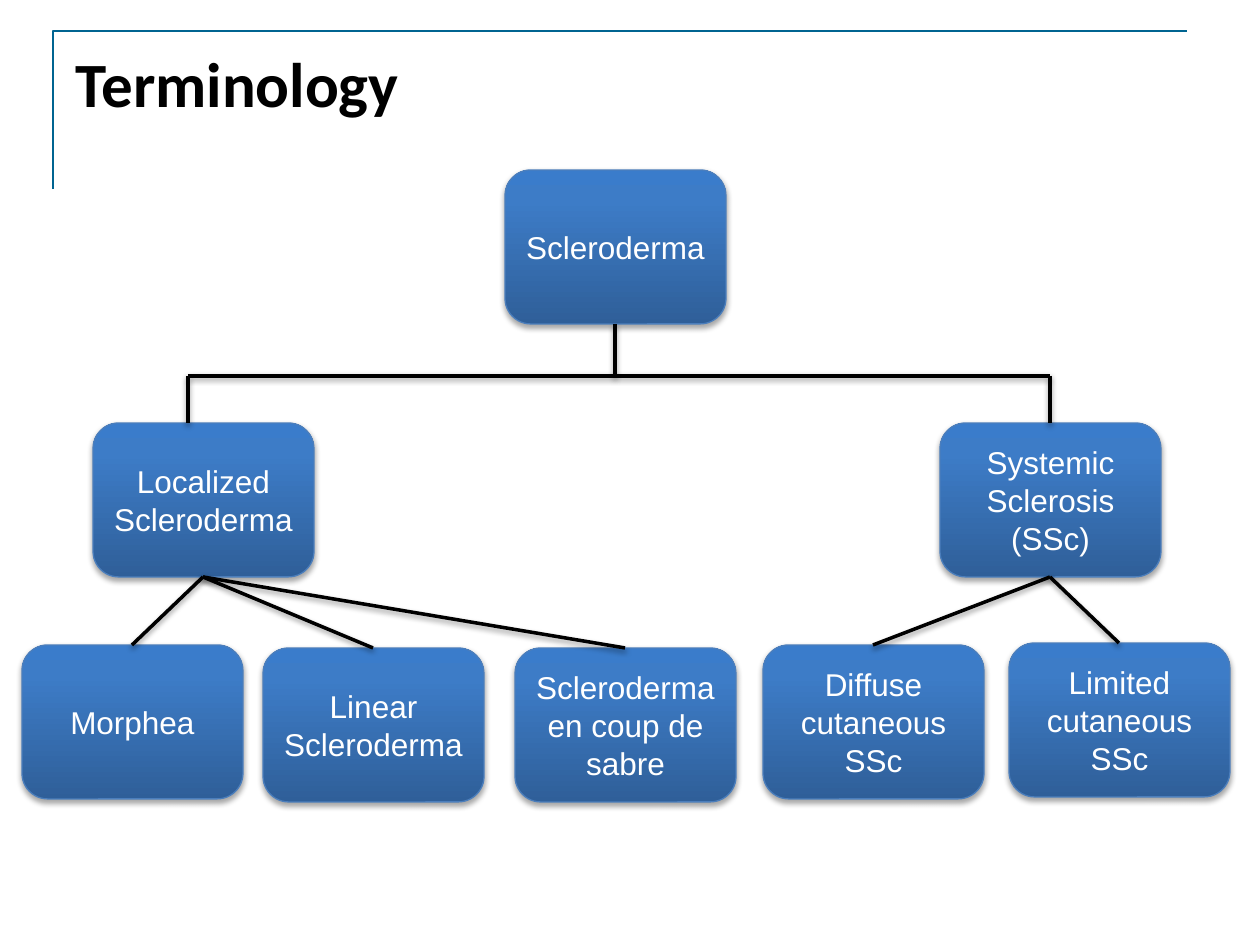
from dataclasses import dataclass

from lxml import etree
from pptx import Presentation
from pptx.dml.color import RGBColor
from pptx.enum.shapes import MSO_CONNECTOR as CONN, MSO_SHAPE as SHAPE
from pptx.enum.text import MSO_ANCHOR as ANCHOR, PP_ALIGN as ALIGN
from pptx.oxml import parse_xml
from pptx.oxml.ns import nsdecls, qn
from pptx.util import Emu, Pt

PX_PER_INCH = 126
BOX_W, BOX_H = 221, 154
COLORS = {
    "frame": "006491", "text": "000000", "box_text": "FFFFFF", "box_line": "4B7EBC",
    "link": "000000", "shadow": "000000",
}
BOX_STOPS = [(0, "2F5F99"), (80, "3D7CC7"), (100, "3A7CCB")]


@dataclass(frozen=True)
class Node:
    text: str
    x: int
    y: int

    @property
    def top(self) -> tuple[int, int]:
        return self.x + BOX_W // 2, self.y

    @property
    def bottom(self) -> tuple[int, int]:
        return self.x + BOX_W // 2, self.y + BOX_H


def px(n: int) -> Emu:
    return Emu(round(n * 914400 / PX_PER_INCH))


def rgb(name: str) -> RGBColor:
    return RGBColor.from_string(COLORS[name])


def set_line(shape, color: str, width: float) -> None:
    shape.line.color.rgb = rgb(color)
    shape.line.width = Pt(width)


def add_shadow(shape, dist: int, alpha: int) -> None:
    shape.element.spPr.append(parse_xml(
        f'<a:effectLst {nsdecls("a")}>'
        f'<a:outerShdw blurRad="40000" dist="{dist}" dir="5400000" rotWithShape="0">'
        f'<a:srgbClr val="{COLORS["shadow"]}"><a:alpha val="{alpha * 1000}"/></a:srgbClr>'
        '</a:outerShdw></a:effectLst>'))


def add_run(p, text: str, font: str, size: int, color: str, bold: bool = False) -> None:
    r = p.add_run()
    r.text = text
    r.font.name, r.font.size, r.font.bold = font, Pt(size), bold
    r.font.color.rgb = rgb(color)


def set_gradient(shape) -> None:
    shape.fill.gradient()
    shape.fill.gradient_angle = 90
    stops = shape.element.spPr.find(".//" + qn("a:gsLst"))
    for old in list(stops):
        stops.remove(old)
    for pos, color in BOX_STOPS:
        gs = etree.SubElement(stops, qn("a:gs"), pos=str(pos * 1000))
        etree.SubElement(gs, qn("a:srgbClr"), val=color)


def add_node(slide, node: Node) -> None:
    sp = slide.shapes.add_shape(SHAPE.ROUNDED_RECTANGLE, px(node.x), px(node.y),
                                px(BOX_W), px(BOX_H))
    set_gradient(sp)
    set_line(sp, "box_line", 0.75)
    add_shadow(sp, 23000, 35)
    tf = sp.text_frame
    tf.word_wrap = True
    tf.vertical_anchor = ANCHOR.MIDDLE
    p = tf.paragraphs[0]
    p.alignment = ALIGN.CENTER
    add_run(p, node.text, "Arial", 18, "box_text")


def add_link(slide, start: tuple[int, int], end: tuple[int, int]) -> None:
    link = slide.shapes.add_connector(CONN.STRAIGHT, *map(px, start + end))
    set_line(link, "link", 2)
    add_shadow(link, 20000, 38)


def add_title(slide, text: str) -> None:
    title = slide.shapes.title
    title.left, title.top, title.width, title.height = map(px, (63, 38, 1134, 157))
    tf = title.text_frame
    tf.vertical_anchor = ANCHOR.TOP
    p = tf.paragraphs[0]
    p.alignment = ALIGN.LEFT
    add_run(p, text, "Calibri", 36, "text", bold=True)


def add_frame(slide) -> None:
    builder = slide.shapes.build_freeform(px(53), px(189), scale=1.0)
    builder.add_line_segments([(px(53), px(31)), (px(1187), px(31))], close=False)
    frame = builder.convert_to_shape()
    frame.fill.background()
    set_line(frame, "frame", 1.5)
    frame.shadow.inherit = False
    slide.shapes.title.element.addprevious(frame.element)  # behind the title


def main() -> None:
    prs = Presentation()
    prs.slide_width, prs.slide_height = px(1260), px(945)
    slide = prs.slides.add_slide(prs.slide_layouts[5])

    # Heading
    add_title(slide, "Terminology")
    add_frame(slide)

    # Tree of terms
    root = Node("Scleroderma", 505, 170)
    localized = Node("Localized Scleroderma", 93, 423)
    systemic = Node("Systemic Sclerosis (SSc)", 940, 423)
    children = {
        localized: [Node("Morphea", 22, 645),
                    Node("Linear Scleroderma", 263, 648),
                    Node("Scleroderma en coup de sabre", 515, 648)],
        systemic: [Node("Diffuse cutaneous SSc", 763, 645),
                   Node("Limited cutaneous SSc", 1009, 643)],
    }
    for node in [root, *children, *sum(children.values(), [])]:
        add_node(slide, node)

    # Bus from the root to both branches
    bus_y = 376
    hub = (615, bus_y)
    add_link(slide, root.bottom, hub)
    for x in (188, systemic.top[0]):
        add_link(slide, hub, (x, bus_y))
        add_link(slide, (x, bus_y), (x, localized.y))

    # Branches to leaves
    for parent, leaves in children.items():
        for leaf in leaves:
            add_link(slide, parent.bottom, leaf.top)

    prs.save("out.pptx")


if __name__ == "__main__":
    main()
